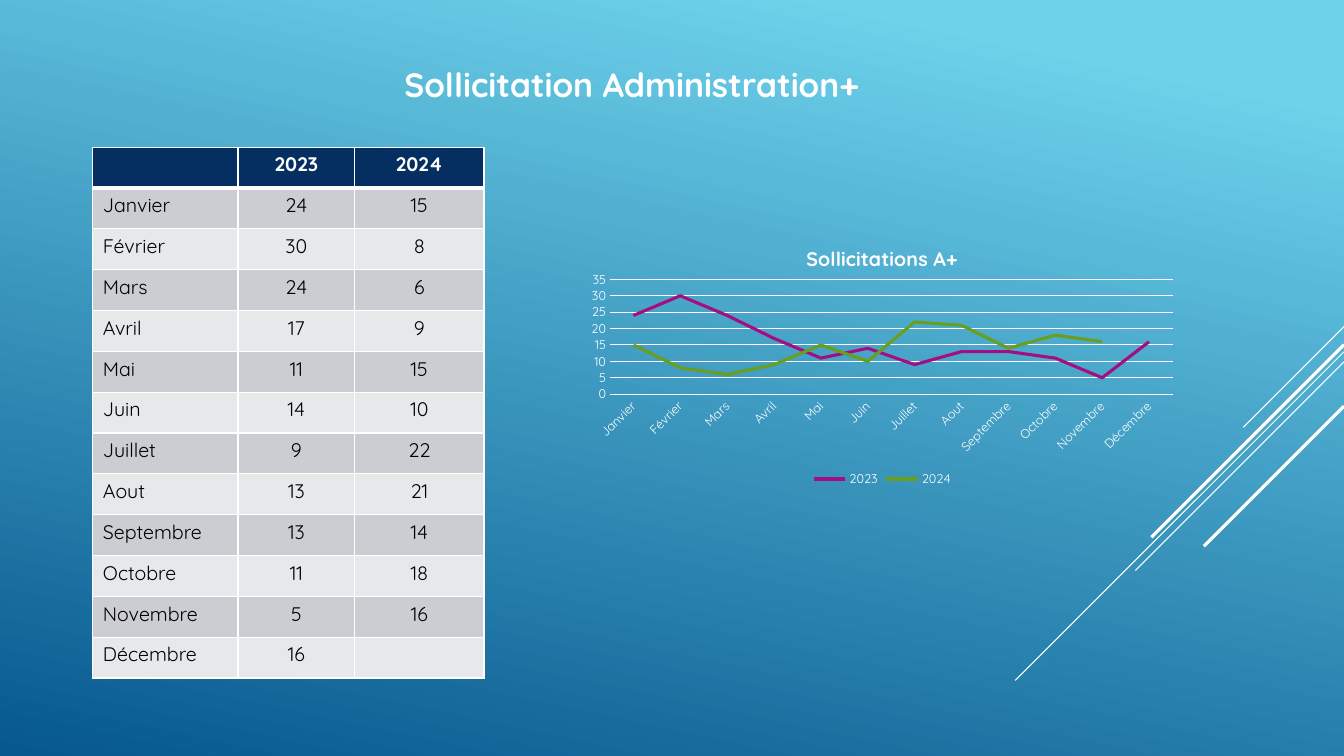
"""Build a slide comparing monthly requests in 2023 and 2024."""
import pptx
import pptx.chart.data
import pptx.dml.color
import pptx.enum.chart
import pptx.enum.shapes
import pptx.enum.text
import pptx.oxml
import pptx.oxml.ns
import pptx.util

Inches = pptx.util.Inches
Pt = pptx.util.Pt
ALIGN = pptx.enum.text.PP_ALIGN

FONT = "Quicksand"
COLORS = {
    "white": "FFFFFF", "black": "000000", "header": "052F61",
    "odd row": "CCCDD2", "even row": "E7E8EA",
    "sky": "6ED2EB", "deep": "06588E", "2023": "A50E82", "2024": "6A9E1F",
}
TITLE = "Sollicitation Administration+"
CHART_TITLE = "Sollicitations A+"
YEARS = ("2023", "2024")
REQUESTS = [
    ("Janvier", 24, 15), ("Février", 30, 8), ("Mars", 24, 6),
    ("Avril", 17, 9), ("Mai", 11, 15), ("Juin", 14, 10),
    ("Juillet", 9, 22), ("Aout", 13, 21), ("Septembre", 13, 14),
    ("Octobre", 11, 18), ("Novembre", 5, 16), ("Décembre", 16, None),
]
COLUMN_WIDTHS = (1.44, 1.16, 1.28)
TABLE_HEIGHT = 5.27
SLIDE_WIDTH = 13.33
DIAGONALS = [
    (3.24, 1.0, 0.75), (3.49, 3.26, 0.75), (3.59, 2.07, 0.75),
    (3.42, 1.91, 2.25), (4.03, 1.39, 2.25),
]
PLOT_AREA = {"x": 0.05, "y": 0.19, "w": 0.93, "h": 0.44}


def rgb(name):
    """Return a named colour."""
    return pptx.dml.color.RGBColor.from_string(COLORS[name])


def style_font(font, size, color="white", bold=False):
    """Format a font."""
    font.name = FONT
    font.size = Pt(size)
    font.bold = bold
    font.color.rgb = rgb(color)


def write(text_frame, text, size=14, color="white", bold=False, align=ALIGN.LEFT):
    """Write one formatted paragraph."""
    paragraph = text_frame.paragraphs[0]
    paragraph.alignment = align
    run = paragraph.add_run()
    run.text = text
    style_font(run.font, size, color, bold)


def parse_xml(tag, content, attributes="", prefix="a"):
    """Return an XML element in the given namespace."""
    namespaces = pptx.oxml.ns.nsdecls("a", "c")
    return pptx.oxml.parse_xml(
        f"<{prefix}:{tag} {namespaces} {attributes}>{content}</{prefix}:{tag}>")


def set_borders(cell, top, bottom):
    """Draw white borders around a cell, widths in points."""
    properties = cell._tc.get_or_add_tcPr()
    fill = f'<a:solidFill><a:srgbClr val="{COLORS["white"]}"/></a:solidFill>'
    widths = {"lnL": 1, "lnR": 1, "lnT": top, "lnB": bottom}
    for position, (tag, width) in enumerate(widths.items()):
        properties.insert(position, parse_xml(tag, fill, f'w="{Pt(width)}"'))


def add_background(slide):
    """Fill the slide with a blue gradient."""
    fill = slide.background.fill
    fill.gradient()
    fill.gradient_angle = 258
    for stop, position, color in zip(fill.gradient_stops, (0.1, 1), ("sky", "deep")):
        stop.position = position
        stop.color.rgb = rgb(color)


def add_diagonals(slide):
    """Draw the 45 degree lines running in from the right edge."""
    for top, run, width in DIAGONALS:
        line = slide.shapes.add_connector(
            pptx.enum.shapes.MSO_CONNECTOR.STRAIGHT,
            Inches(SLIDE_WIDTH), Inches(top),
            Inches(SLIDE_WIDTH - run), Inches(top + run))
        line.line.color.rgb = rgb("white")
        line.line.width = Pt(width)
        line._element.spPr.append(parse_xml("effectLst", ""))


def add_title(slide):
    """Place the slide title."""
    title = slide.shapes.title
    title.left, title.top = Inches(3.91), Inches(0.58)
    title.width, title.height = Inches(5.34), Inches(0.5)
    title.text_frame.word_wrap = True
    title.text_frame.vertical_anchor = pptx.enum.text.MSO_ANCHOR.TOP
    write(title.text_frame, TITLE, size=24, bold=True)


def add_request_table(slide):
    """Add the monthly table."""
    rows = [("", *YEARS), *REQUESTS]
    table = slide.shapes.add_table(
        len(rows), len(COLUMN_WIDTHS), Inches(0.92), Inches(1.46),
        Inches(sum(COLUMN_WIDTHS)), Inches(TABLE_HEIGHT)).table
    table.horz_banding = False
    for column, width in zip(table.columns, COLUMN_WIDTHS):
        column.width = Inches(width)
    for row_index, values in enumerate(rows):
        table.rows[row_index].height = Inches(TABLE_HEIGHT / len(rows))
        header = row_index == 0
        fill = "header" if header else "odd row" if row_index % 2 else "even row"
        for column_index, value in enumerate(values):
            cell = table.cell(row_index, column_index)
            cell.fill.solid()
            cell.fill.fore_color.rgb = rgb(fill)
            set_borders(cell, top=3 if row_index == 1 else 1, bottom=3 if header else 1)
            write(cell.text_frame, "" if value is None else str(value),
                  color="white" if header else "black", bold=header,
                  align=ALIGN.CENTER if column_index else ALIGN.LEFT)


def add_request_chart(slide):
    """Add the line chart of both years."""
    months, *series_values = zip(*REQUESTS)
    data = pptx.chart.data.CategoryChartData()
    data.categories = months
    for year, values in zip(YEARS, series_values):
        data.add_series(year, values)
    chart = slide.shapes.add_chart(
        pptx.enum.chart.XL_CHART_TYPE.LINE, Inches(5.75), Inches(2.28),
        Inches(6), Inches(2.59), data).chart
    style_font(chart.font, 10)
    chart.has_title = True
    write(chart.chart_title.text_frame, CHART_TITLE, bold=True, align=ALIGN.CENTER)
    chart.chart_title.include_in_layout = False
    chart.has_legend = True
    chart.legend.position = pptx.enum.chart.XL_LEGEND_POSITION.BOTTOM
    chart.legend.include_in_layout = False
    style_font(chart.legend.font, 9)

    for axis in (chart.category_axis, chart.value_axis):
        style_font(axis.tick_labels.font, 9)
        axis.major_tick_mark = pptx.enum.chart.XL_TICK_MARK.NONE
        axis.minor_tick_mark = pptx.enum.chart.XL_TICK_MARK.NONE
    months_axis, values_axis = chart.category_axis, chart.value_axis
    values_axis.minimum_scale, values_axis.maximum_scale = 0, 35
    values_axis.major_unit = 5
    values_axis.format.line.fill.background()
    values_axis.has_major_gridlines = True
    for line in (months_axis.format.line, values_axis.major_gridlines.format.line):
        line.color.rgb = rgb("white")
        line.width = Pt(0.75)
    label_body = months_axis._element.find(".//" + pptx.oxml.ns.qn("a:bodyPr"))
    label_body.set("rot", str(-45 * 60000))

    chart.plots[0].vary_by_categories = False
    for series in chart.plots[0].series:
        series.smooth = False
        series.marker.style = pptx.enum.chart.XL_MARKER_STYLE.NONE
        series.format.line.color.rgb = rgb(series.name)
        series.format.line.width = Pt(2.25)

    modes = '<c:layoutTarget val="inner"/><c:xMode val="edge"/><c:yMode val="edge"/>'
    sizes = "".join(f'<c:{key} val="{value}"/>' for key, value in PLOT_AREA.items())
    layout = parse_xml("layout", f"<c:manualLayout>{modes}{sizes}</c:manualLayout>", prefix="c")
    plot_area = chart._chartSpace.chart.plotArea
    for old_layout in plot_area.findall(pptx.oxml.ns.qn("c:layout")):
        plot_area.remove(old_layout)
    plot_area.insert(0, layout)


def main():
    """Build and save the presentation."""
    presentation = pptx.Presentation()
    presentation.slide_width = Inches(SLIDE_WIDTH)
    presentation.slide_height = Inches(7.5)
    slide = presentation.slides.add_slide(presentation.slide_layouts[5])
    add_background(slide)
    add_diagonals(slide)
    add_title(slide)
    add_request_table(slide)
    add_request_chart(slide)
    presentation.save("out.pptx")


if __name__ == "__main__":
    main()
